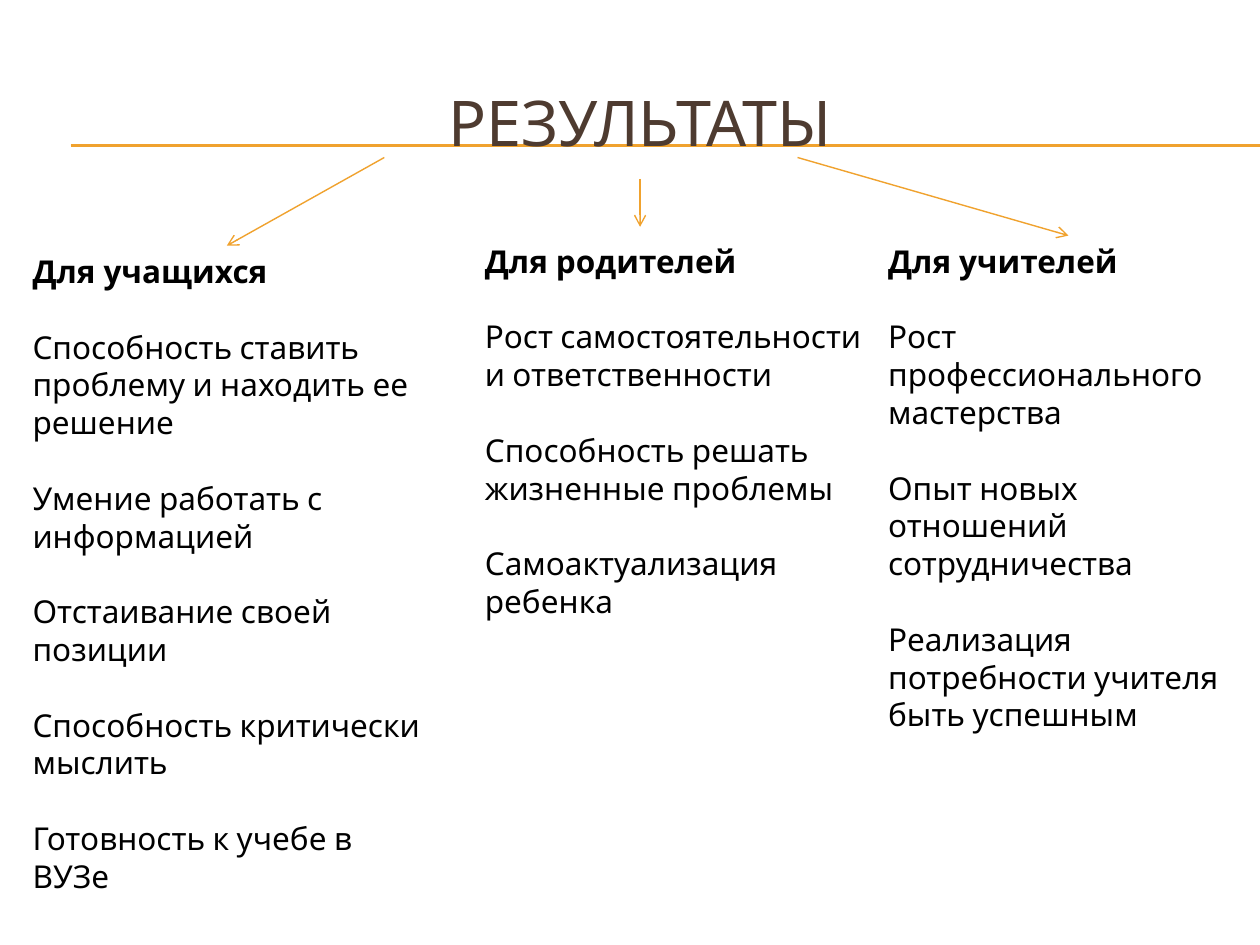
import pptx
import pptx.util
import pptx.dml.color
import pptx.enum.shapes
import pptx.enum.text
import pptx.oxml.ns
import lxml.etree

AMBER = pptx.dml.color.RGBColor(0xF0, 0xA2, 0x2E)
BROWN = pptx.dml.color.RGBColor(0x4E, 0x3B, 0x30)
BLACK = pptx.dml.color.RGBColor(0x00, 0x00, 0x00)
COLUMNS, ROWS = 100, 75

RULE_ROWS = (11.5, 11.6)
AUDIENCES = [
    ((1.6, 19.5, 32.8, 49.5), "Для учащихся", [
        "Способность ставить проблему и находить ее решение",
        "Умение работать с информацией",
        "Отстаивание своей позиции",
        "Способность критически мыслить",
        "Готовность к учебе в ВУЗе",
    ]),
    ((37.5, 18.7, 32, 31.3), "Для родителей", [
        "Рост самостоятельности и ответственности",
        "Способность решать жизненные проблемы",
        "Самоактуализация ребенка",
    ]),
    ((69.5, 18.7, 30.5, 37.4), "Для учителей", [
        "Рост профессионального мастерства",
        "Опыт новых отношений сотрудничества",
        "Реализация потребности учителя быть успешным",
    ]),
]
ARROWS = [
    ((30.5, 12.5), (18, 19.5)),
    ((50.8, 14.2), (50.8, 18)),
    ((63.3, 12.5), (84.8, 18.7)),
]


class SlideBuilder:
    font_name = "Karla"
    title_size = 36
    body_size = 18
    paragraph_gap = 21.6

    def __init__(self, deck):
        self.cell_width = deck.slide_width / COLUMNS
        self.cell_height = deck.slide_height / ROWS
        self.slide = deck.slides.add_slide(deck.slide_layouts.get_by_name("Title Only"))

    def place(self, column, row):
        return round(column * self.cell_width), round(row * self.cell_height)

    def style(self, para, size, color, bold=False):
        para.font.name = self.font_name
        para.font.size = pptx.util.Pt(size)
        para.font.color.rgb = color
        para.font.bold = bold

    def title(self, text, left, top, width, height):
        title = self.slide.shapes.title
        title.left, title.top = self.place(left, top)
        title.width, title.height = self.place(width, height)
        frame = title.text_frame
        frame.text = text
        frame.vertical_anchor = pptx.enum.text.MSO_ANCHOR.MIDDLE
        para = frame.paragraphs[0]
        para.alignment = pptx.enum.text.PP_ALIGN.CENTER
        self.style(para, self.title_size, BROWN)

    def line(self, start, end, weight):
        line = self.slide.shapes.add_connector(
            pptx.enum.shapes.MSO_CONNECTOR.STRAIGHT, *self.place(*start), *self.place(*end))
        line.line.color.rgb = AMBER
        line.line.width = pptx.util.Pt(weight)
        lxml.etree.SubElement(line.element.spPr, pptx.oxml.ns.qn("a:effectLst"))
        return line

    def rule(self, row):
        rule = self.line((5.6, row), (COLUMNS, row), 0.75)
        self.slide.shapes.title.element.addprevious(rule.element)

    def arrow(self, start, end):
        arrow = self.line(start, end, 0.79)
        outline = arrow.line.fill._xPr
        lxml.etree.SubElement(outline, pptx.oxml.ns.qn("a:tailEnd"), type="arrow")

    def text_column(self, area, heading, points):
        left, top, width, height = area
        box = self.slide.shapes.add_textbox(*self.place(left, top), *self.place(width, height))
        frame = box.text_frame
        frame.word_wrap = True
        frame.auto_size = pptx.enum.text.MSO_AUTO_SIZE.SHAPE_TO_FIT_TEXT
        frame.text = "\n".join([heading, *points])
        for index, para in enumerate(frame.paragraphs):
            self.style(para, self.body_size, BLACK, bold=index == 0)
            if index:
                para.space_before = pptx.util.Pt(self.paragraph_gap)


def main():
    deck = pptx.Presentation()
    deck.slide_width = pptx.util.Inches(10)
    deck.slide_height = pptx.util.Inches(7.5)
    builder = SlideBuilder(deck)
    builder.title("РЕЗУЛЬТАТЫ", 3.3, 5, 95, 9.2)
    for row in RULE_ROWS:
        builder.rule(row)
    for area, heading, points in AUDIENCES:
        builder.text_column(area, heading, points)
    for start, end in ARROWS:
        builder.arrow(start, end)
    deck.save("out.pptx")


if __name__ == "__main__":
    main()
